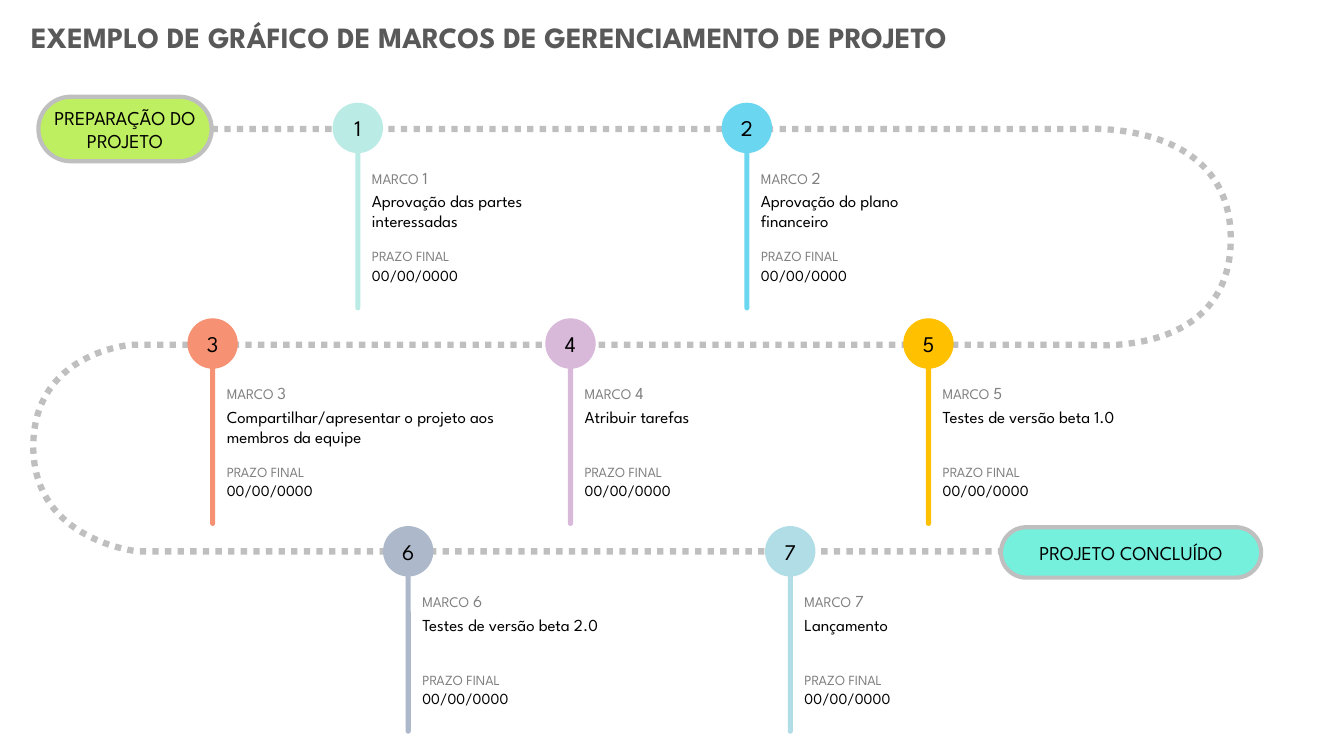
from lxml.etree import SubElement
from pptx import Presentation
from pptx.dml.color import RGBColor
from pptx.enum.dml import MSO_LINE
from pptx.enum.shapes import MSO_SHAPE
from pptx.enum.text import MSO_ANCHOR, MSO_AUTO_SIZE, PP_ALIGN
from pptx.oxml.ns import qn
from pptx.util import Pt

FONT = "League Spartan"
BLACK, LABEL_GRAY, TITLE_GRAY, TRACK_GRAY = "000000", "808080", "595959", "BFBFBF"
CIRCLE_SIZE = 36
ROW_TOPS = (73.4, 227.4, 375.8)

# Number, row, circle left, colour, description, description width, deadline width
MILESTONES = [
    (1, 0, 237.6, "BBEBE5", "Aprovação das partes interessadas", 162.7, 105.8),
    (2, 0, 515.5, "6BD6F0", "Aprovação do plano financeiro", 136.8, 107.3),
    (3, 1, 133.9, "F79173", "Compartilhar/apresentar o projeto aos membros da equipe",
     209.5, 110.9),
    (4, 1, 389.5, "D9B9D9", "Atribuir tarefas", 98.6, 113),
    (5, 1, 645.2, "FFC000", "Testes de versão beta 1.0", 164.2, 109.4),
    (6, 2, 273.6, "ADB9CA", "Testes de versão beta 2.0", 168.5, 92.9),
    (7, 2, 546.5, "B1DDE6", "Lançamento", 98.6, 86.4),
]

TRACK_START = (151.2, 92.16)
TRACK_STEPS = [
    [(772.56, 92.16)],
    [(772.56, 92.16), (879.12, 84.24), (879.12, 170.64)],
    [(879.12, 257.04), (776.16, 246.24), (776.16, 246.24)],
    [(94.32, 246.24)],
    [(94.32, 246.24), (23.76, 251.28), (23.76, 318.96)],
    [(23.76, 386.64), (98.64, 393.84), (98.64, 393.84)],
    [(740.16, 393.84)],
]


def color(hex_code):
    """Turn a hex string into a colour."""
    return RGBColor.from_string(hex_code)


def write_runs(paragraph, runs, bold=False):
    """Add (text, size, colour) runs to a paragraph."""
    for text, size, hex_code in runs:
        run = paragraph.add_run()
        run.text = text
        run.font.name = FONT
        run.font.size = Pt(size)
        run.font.bold = bold
        run.font.color.rgb = color(hex_code)


def clear_margins(frame):
    """Remove the inner margins of a text frame and let it wrap."""
    frame.word_wrap = True
    frame.margin_left = frame.margin_right = Pt(0)
    frame.margin_top = frame.margin_bottom = Pt(0)


def add_label(shapes, left, top, width, height, runs):
    """Add a text box without margins and return its paragraph."""
    frame = shapes.add_textbox(Pt(left), Pt(top), Pt(width), Pt(height)).text_frame
    clear_margins(frame)
    write_runs(frame.paragraphs[0], runs)
    return frame.paragraphs[0]


def add_solid(shapes, preset, left, top, width, height, fill):
    """Add a filled preset shape without outline, fully rounded if a rectangle."""
    solid = shapes.add_shape(preset, Pt(left), Pt(top), Pt(width), Pt(height))
    solid.shadow.inherit = False
    solid.fill.solid()
    solid.fill.fore_color.rgb = color(fill)
    solid.line.fill.background()
    if preset == MSO_SHAPE.ROUNDED_RECTANGLE:
        solid.adjustments[0] = 0.5
    return solid


def center_text(shape, text, size):
    """Write centred black text in a shape."""
    frame = shape.text_frame
    clear_margins(frame)
    frame.vertical_anchor = MSO_ANCHOR.MIDDLE
    frame.paragraphs[0].alignment = PP_ALIGN.CENTER
    write_runs(frame.paragraphs[0], [(text, size, BLACK)])


def add_terminal(shapes, left, top, width, height, fill, text):
    """Add the outlined pill at one end of the track."""
    pill = add_solid(shapes, MSO_SHAPE.ROUNDED_RECTANGLE, left, top, width, height, fill)
    pill.line.color.rgb = color(TRACK_GRAY)
    pill.line.width = Pt(3)
    center_text(pill, text, 14)


def add_track(shapes):
    """Draw the dotted winding track, bending the steps that have control points."""
    builder = shapes.build_freeform(Pt(TRACK_START[0]), Pt(TRACK_START[1]))
    ends = [step[-1] for step in TRACK_STEPS]
    builder.add_line_segments([(Pt(x), Pt(y)) for x, y in ends], close=False)
    track = builder.convert_to_shape()
    track.shadow.inherit = False
    track.fill.background()
    track.line.color.rgb = color(TRACK_GRAY)
    track.line.width = Pt(4.5)
    track.line.dash_style = MSO_LINE.ROUND_DOT
    segments = list(track._element.iter(qn("a:lnTo")))
    for segment, step in zip(segments, TRACK_STEPS):
        if len(step) == 3:
            bend = segment.makeelement(qn("a:cubicBezTo"))
            for x, y in step:
                SubElement(bend, qn("a:pt"), x=str(Pt(x) - track.left),
                           y=str(Pt(y) - track.top))
            segment.getparent().replace(segment, bend)


def add_milestone(shapes, number, row, left, fill, description, text_width, deadline_width):
    """Add one grouped milestone: stem, texts and numbered circle."""
    parts = shapes.add_group_shape().shapes
    top = ROW_TOPS[row]
    text_left = left + 28.1
    add_solid(parts, MSO_SHAPE.ROUNDED_RECTANGLE, left + 16.2, top + 13.7, 3.6, 134.6, fill)
    add_label(parts, text_left, top + 46.1, 84.2, 18.7,
              [("MARCO", 10.5, LABEL_GRAY), (" ", 11, LABEL_GRAY),
               (str(number), 12, LABEL_GRAY)])
    add_label(parts, text_left, top + 63, text_width, 41, [(description, 12, BLACK)])
    deadline = add_label(parts, text_left, top + 103.7, deadline_width, 14.4,
                         [("PRAZO FINAL", 10, LABEL_GRAY)])
    deadline.space_after = Pt(3)
    add_label(parts, text_left, top + 116.6, 64.8, 18.7, [("00/00/0000", 11, BLACK)])
    circle = add_solid(parts, MSO_SHAPE.OVAL, left, top, CIRCLE_SIZE, CIRCLE_SIZE, fill)
    center_text(circle, str(number), 16)


def add_title(shapes, text):
    """Add the slide heading."""
    frame = shapes.add_textbox(Pt(15.1), Pt(10.1), Pt(730.8), Pt(32.4)).text_frame
    frame.word_wrap = True
    frame.auto_size = MSO_AUTO_SIZE.SHAPE_TO_FIT_TEXT
    write_runs(frame.paragraphs[0], [(text, 21, TITLE_GRAY)], bold=True)


def main():
    """Build the milestone chart slide."""
    presentation = Presentation()
    presentation.slide_width, presentation.slide_height = Pt(960), Pt(540)
    shapes = presentation.slides.add_slide(presentation.slide_layouts[6]).shapes
    add_title(shapes, "EXEMPLO DE GRÁFICO DE MARCOS DE GERENCIAMENTO DE PROJETO")
    add_track(shapes)
    add_terminal(shapes, 27.4, 69.1, 123.8, 46.1, "BEEF60", "PREPARAÇÃO DO PROJETO")
    for milestone in MILESTONES:
        add_milestone(shapes, *milestone)
    add_terminal(shapes, 715, 376.6, 185.8, 36, "75F0DC", "PROJETO CONCLUÍDO")
    presentation.save("out.pptx")


if __name__ == "__main__":
    main()
